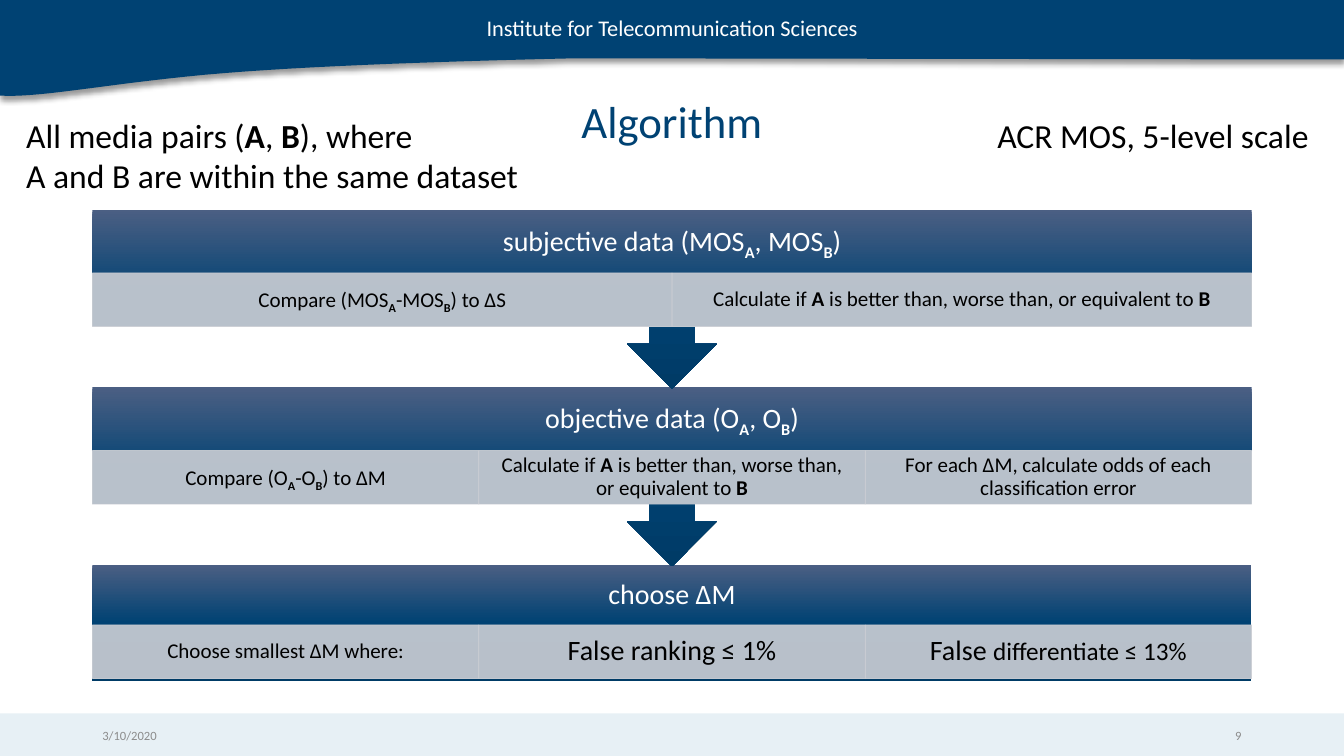
from pptx import Presentation
from pptx.dml.color import RGBColor
from pptx.enum.shapes import MSO_SHAPE
from pptx.enum.text import MSO_ANCHOR, PP_ALIGN
from pptx.oxml import parse_xml
from pptx.oxml.ns import nsdecls, qn
from pptx.util import Cm, Pt

COLORS = {
    "navy": "004273", "slate": "4B5F83", "deep": "003B66", "cell": "CCCFD5",
    "footer": "E7F0F5", "muted": "8C8C8C", "white": "FFFFFF", "black": "000000",
}
SUB_A, SUB_B = ("A", "sub"), ("B", "sub")
BOLD_A, BOLD_B = ("A", "bold"), ("B", "bold")
VERDICT = ["Calculate if ", BOLD_A, " is better than, worse than, or equivalent to ", BOLD_B]
STAGES = [
    (["subjective data (MOS", SUB_A, ", MOS", SUB_B, ")"],
     [(["Compare (MOS", SUB_A, "-MOS", SUB_B, ") to ΔS"], 15), (VERDICT, 15)]),
    (["objective data (O", SUB_A, ", O", SUB_B, ")"],
     [(["Compare (O", SUB_A, "-O", SUB_B, ") to ΔM"], 15), (VERDICT, 15),
      (["For each ΔM, calculate odds of each classification error"], 15)]),
    (["choose ΔM"],
     [(["Choose smallest ΔM where:"], 15), (["False ranking ≤ 1%"], 20),
      (["False ", ("differentiate ≤ 13%", "small")], 20)]),
]


def rgb(name):
    """Return the named colour."""
    return RGBColor.from_string(COLORS[name])


def write(p, parts, size, color, align=PP_ALIGN.LEFT, spacing=1.0):
    """Fill a paragraph with plain and styled runs."""
    p.alignment, p.line_spacing = align, spacing
    p.font.size, p.font.name, p.font.color.rgb = Pt(size), "Calibri", rgb(color)
    for part in parts:
        if part == "\n":
            p.add_line_break()
            continue
        text, style = (part, None) if isinstance(part, str) else part
        r = p.add_run()
        r.text = text
        if style == "small":
            r.font.size = Pt(18)
        elif style:
            r.font.bold = True
        if style == "sub":
            r.font._element.set("baseline", "-25000")


def set_frame(tf, anchor, insets=(0.25, 0.13, 0.25, 0.13)):
    """Set wrapping, anchor and insets of a text frame."""
    tf.word_wrap, tf.vertical_anchor = True, anchor
    tf.margin_left, tf.margin_top, tf.margin_right, tf.margin_bottom = map(Cm, insets)


def add_label(s, box, parts, size, color, align=PP_ALIGN.LEFT, anchor=MSO_ANCHOR.TOP):
    """Add a text box."""
    tf = s.shapes.add_textbox(*map(Cm, box)).text_frame
    set_frame(tf, anchor)
    write(tf.paragraphs[0], parts, size, color, align)


def add_block(s, kind, box):
    """Add a preset shape without shadow."""
    sp = s.shapes.add_shape(kind, *map(Cm, box))
    sp.shadow.inherit = False
    return sp


def fill_gradient(sp):
    """Give a shape the vertical blue gradient without an outline."""
    stops = "".join(
        f'<a:gs pos="{pos}"><a:srgbClr val="{COLORS[name]}"/></a:gs>'
        for pos, name in ((0, "slate"), (50000, "navy"), (100000, "deep")))
    grad = parse_xml(f'<a:gradFill {nsdecls("a")}><a:gsLst>{stops}</a:gsLst>'
                     '<a:lin ang="5400000" scaled="0"/></a:gradFill>')
    sp._element.spPr.find(qn("a:prstGeom")).addnext(grad)
    sp.line.fill.background()


def add_cell(s, box, parts, size):
    """Add one translucent step cell."""
    sp = add_block(s, MSO_SHAPE.RECTANGLE, box)
    sp.fill.solid()
    sp.fill.fore_color.rgb = sp.line.color.rgb = rgb("cell")
    sp.line.width = Pt(0.5)
    for color in sp._element.spPr.iter(qn("a:srgbClr")):
        color.append(parse_xml(f'<a:alpha {nsdecls("a")} val="90000"/>'))
    set_frame(sp.text_frame, MSO_ANCHOR.MIDDLE, (0.3, 0.05, 0.3, 0.05))
    write(sp.text_frame.paragraphs[0], parts, size, "black", PP_ALIGN.CENTER, 0.9)


def add_stage(s, box, heading, cells, last):
    """Add a stage: its block, heading and row of cells."""
    left, top, width, height = box
    kind = MSO_SHAPE.RECTANGLE if last else MSO_SHAPE.DOWN_ARROW_CALLOUT
    sp = add_block(s, kind, box)
    fill_gradient(sp)
    set_frame(sp.text_frame, MSO_ANCHOR.MIDDLE, (0.4, 0, 0.4, 1.35))
    write(sp.text_frame.paragraphs[0], heading, 20, "white", PP_ALIGN.CENTER, 0.9)
    cell_width = width / len(cells)
    cell_top = top + (1.52 if last else 1.6)
    for i, (parts, size) in enumerate(cells):
        add_cell(s, (left + i * cell_width, cell_top, cell_width, 1.35), parts, size)


def add_flow(s, box):
    """Stack the stages down the given box."""
    left, top, width, height = box
    body = 2.92
    pitch = (height - body) / (len(STAGES) - 1)
    for i, (heading, cells) in reversed(list(enumerate(STAGES))):
        last = i == len(STAGES) - 1
        stage = (left, top + i * pitch, width, body if last else pitch + 0.04)
        add_stage(s, stage, heading, cells, last)


def bezier(points, steps=16):
    """Sample a cubic curve after its first point."""
    for k in range(1, steps + 1):
        t = k / steps
        weights = ((1 - t) ** 3, 3 * t * (1 - t) ** 2, 3 * t * t * (1 - t), t ** 3)
        yield tuple(sum(w * pt[axis] for w, pt in zip(weights, points)) for axis in (0, 1))


def add_banner(s, box):
    """Draw the wavy top band with its name."""
    left, top, width, height = box
    outline = [(width, -0.05), (width, 1.5), (14.48, 1.47)]
    outline += bezier([(14.48, 1.47), (11.02, 1.55), (7.09, 1.68), (4.7, 1.93)])
    outline += bezier([(4.7, 1.93), (2.31, 2.18), (0.97, 2.46), (0, height)])
    fb = s.shapes.build_freeform(Cm(left), Cm(top), scale=1.0)
    fb.add_line_segments([(Cm(left + x), Cm(top + y)) for x, y in outline])
    sp = fb.convert_to_shape()
    sp.fill.solid()
    sp.fill.fore_color.rgb = rgb("navy")
    sp.line.fill.background()
    sp._element.spPr.append(parse_xml(
        f'<a:effectLst {nsdecls("a")}><a:outerShdw blurRad="50800" dist="38100" dir="5400000">'
        f'<a:srgbClr val="{COLORS["black"]}"><a:alpha val="40000"/></a:srgbClr>'
        '</a:outerShdw></a:effectLst>'))
    add_label(s, (left + 10.94, top + 0.23, 12, 0.94),
              ["Institute for Telecommunication Sciences"], 16, "white", PP_ALIGN.CENTER)


def add_footer(s, box):
    """Draw the bottom band with date and page number."""
    left, top, width, height = box
    sp = add_block(s, MSO_SHAPE.RECTANGLE, box)
    sp.fill.solid()
    sp.fill.fore_color.rgb = rgb("footer")
    sp.line.fill.background()
    for x, text, align in ((2.33, "3/10/2020", PP_ALIGN.LEFT),
                           (width - 9.95, "9", PP_ALIGN.RIGHT)):
        add_label(s, (left + x, top + 0.05, 7.62, 1.02), [text], 9, "muted",
                  align, MSO_ANCHOR.MIDDLE)


def add_heading(s, box):
    """Place the title and the notes on either side of it."""
    left, top, width, height = box
    title = s.shapes.title
    title.left, title.top, title.width, title.height = map(
        Cm, (left + 2.33, top, width - 4.66, 2.67))
    set_frame(title.text_frame, MSO_ANCHOR.MIDDLE)
    write(title.text_frame.paragraphs[0], ["Algorithm"], 32, "navy", PP_ALIGN.CENTER, 0.9)
    add_label(s, (left + 0.41, top + 0.99, 13.34, 3.07),
              ["All media pairs (", BOLD_A, ", ", BOLD_B, "), where ", "\n",
               "A and B are within the same dataset"], 24, "black")
    add_label(s, (left + 19.89, top + 0.99, 13.34, 1.27),
              ["ACR MOS, 5-level scale"], 24, "black", PP_ALIGN.RIGHT)


def main():
    """Build and save the slide."""
    prs = Presentation()
    prs.slide_width, prs.slide_height = Cm(33.87), Cm(19.05)
    s = prs.slides.add_slide(prs.slide_layouts[5])
    add_footer(s, (0, 17.98, 33.87, 1.07))
    add_banner(s, (0, 0, 33.87, 2.41))
    add_heading(s, (0, 1.78, 33.87, 4.06))
    add_flow(s, (2.33, 5.28, 29.21, 11.87))
    prs.save("out.pptx")


if __name__ == "__main__":
    main()
